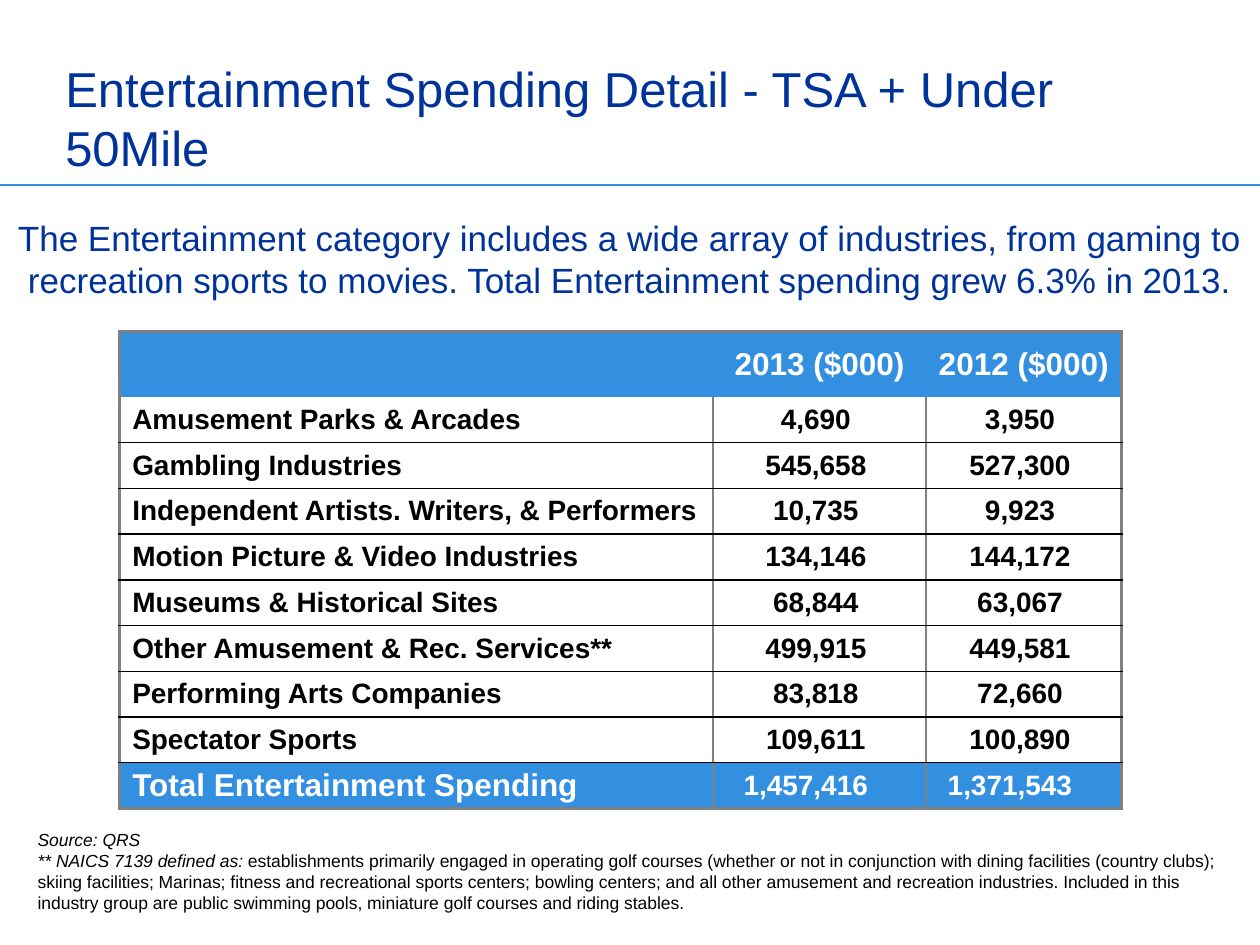
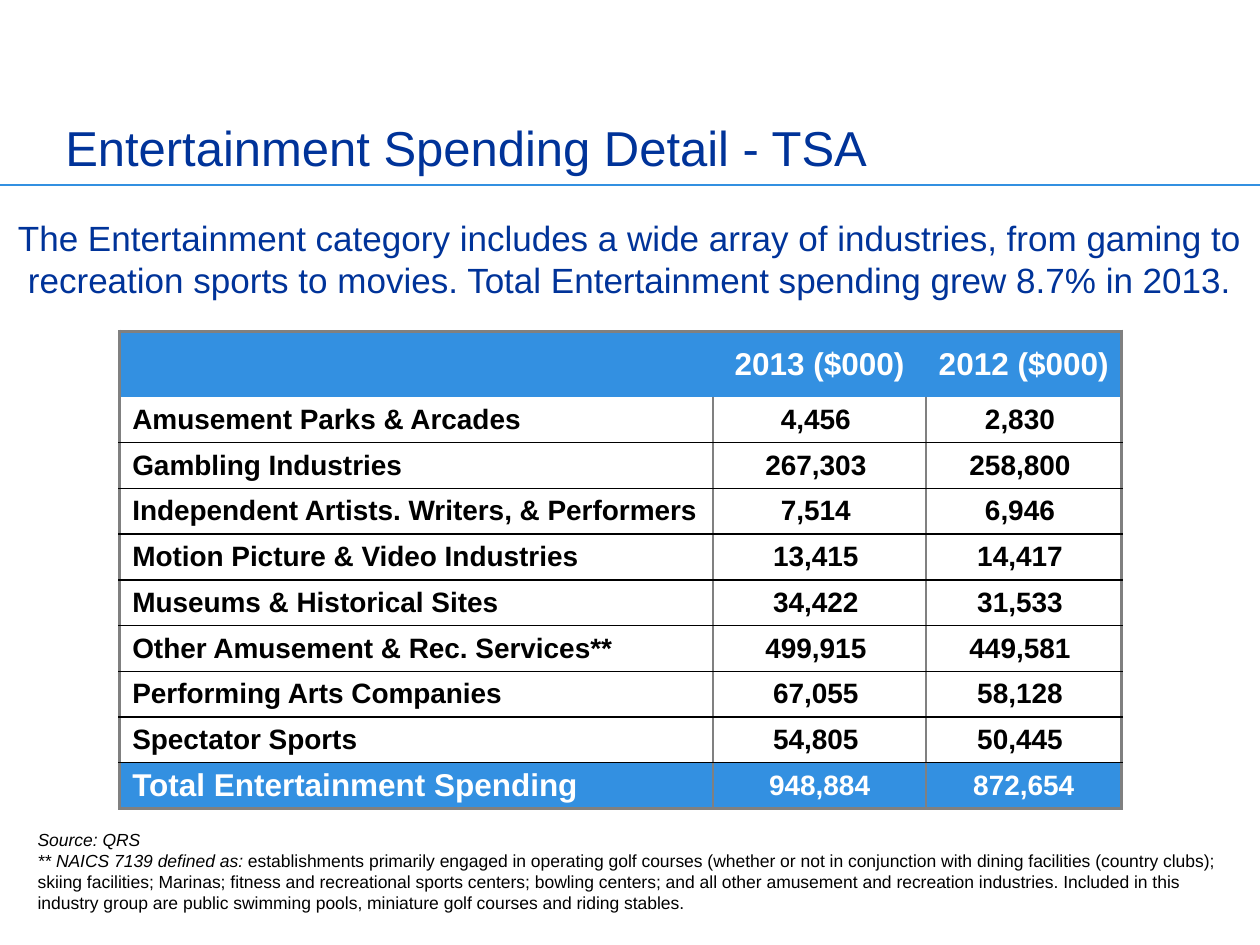
from dataclasses import dataclass
from typing import NamedTuple, Optional

from lxml import etree
from pptx import Presentation
from pptx.dml.color import RGBColor
from pptx.enum.shapes import MSO_CONNECTOR, MSO_SHAPE
from pptx.enum.text import MSO_ANCHOR, PP_ALIGN
from pptx.oxml.ns import qn
from pptx.util import Emu, Pt

LEFT, CENTER = PP_ALIGN.LEFT, PP_ALIGN.CENTER
TOP, MIDDLE, BOTTOM = MSO_ANCHOR.TOP, MSO_ANCHOR.MIDDLE, MSO_ANCHOR.BOTTOM
STRAIGHT, RECTANGLE = MSO_CONNECTOR.STRAIGHT, MSO_SHAPE.RECTANGLE
EMU_PER_PX = 9144  # 100 px to the inch


def px(length: int) -> Emu:
    return Emu(length * EMU_PER_PX)


# Theme
@dataclass(frozen=True)
class Theme:
    font: str = "Arial"
    navy: str = "003399"
    blue: str = "3390E1"
    gray: str = "808080"
    black: str = "000000"
    white: str = "FFFFFF"
    title_size: int = 28
    intro_size: int = 20
    heading_size: int = 18
    body_size: int = 16
    note_size: int = 10
    thin: float = 1
    thick: float = 2.25


THEME = Theme()


class Box(NamedTuple):
    left: int
    top: int
    width: int
    height: int

    def emu(self) -> list[Emu]:
        return [px(length) for length in self]


class Style(NamedTuple):
    size: int
    color: str
    align: PP_ALIGN = LEFT
    anchor: MSO_ANCHOR = MIDDLE
    bold: bool = False


class Margins(NamedTuple):
    left: int
    top: int
    right: int
    bottom: int


class Border(NamedTuple):
    color: str
    points: float


class SpendingSlide(NamedTuple):
    title: str
    growth: str
    values: list[tuple[str, str]]
    totals: tuple[str, str]
    total_right_margin: int


# Layout
SLIDE_WIDTH, SLIDE_HEIGHT = 1000, 750
RULE_Y = 147
TITLE_BOX = Box(42, 21, 823, 124)
INTRO_BOX = Box(0, 128, 1000, 154)
TABLE_BOX = Box(95, 263, 795, 379)
NOTE_BOX = Box(20, 653, 959, 77)
COLUMN_WIDTHS = (471, 169, 155)
HEADER_HEIGHT = 52

TITLE_STYLE = Style(THEME.title_size, THEME.navy, anchor=BOTTOM)
INTRO_STYLE = Style(THEME.intro_size, THEME.navy, CENTER)
NOTE_STYLE = Style(THEME.note_size, THEME.black, anchor=TOP)
HEADER_STYLE = Style(THEME.heading_size, THEME.white, CENTER, bold=True)
LABEL_STYLE = Style(THEME.body_size, THEME.black, bold=True)
VALUE_STYLE = LABEL_STYLE._replace(align=CENTER)
TOTAL_LABEL_STYLE = HEADER_STYLE._replace(align=LEFT)
TOTAL_VALUE_STYLE = VALUE_STYLE._replace(color=THEME.white)

LABEL_MARGINS = Margins(10, 1, 10, 1)
VALUE_MARGINS = Margins(0, 0, 6, 0)
OUTER = Border(THEME.gray, THEME.thick)
COLUMN_LINE = Border(THEME.gray, THEME.thin)
ROW_LINE = Border(THEME.black, THEME.thin)

# Content
INTRO = ("The Entertainment category includes a wide array of industries, from gaming to "
         "recreation sports to movies. Total Entertainment spending grew {} in 2013.")
HEADINGS = ("", "2013 ($000)", "2012 ($000)")
INDUSTRIES = (
    "Amusement Parks & Arcades",
    "Gambling Industries",
    "Independent Artists. Writers, & Performers",
    "Motion Picture & Video Industries",
    "Museums & Historical Sites",
    "Other Amusement & Rec. Services**",
    "Performing Arts Companies",
    "Spectator Sports",
)
TOTAL_LABEL = "Total Entertainment Spending"
SOURCE = "Source: QRS"
NOTE_LEAD = "** NAICS 7139 defined as: "
NOTE = ("establishments primarily engaged in operating golf courses (whether or not in "
        "conjunction with dining facilities (country clubs); skiing facilities; Marinas; "
        "fitness and recreational sports centers; bowling centers; and all other amusement "
        "and recreation industries. Included in this industry group are public swimming "
        "pools, miniature golf courses and riding stables.")

SLIDES = (
    SpendingSlide(
        "Entertainment Spending Detail - TSA + Under 50Mile", "6.3%",
        [("4,690", "3,950"), ("545,658", "527,300"), ("10,735", "9,923"),
         ("134,146", "144,172"), ("68,844", "63,067"), ("499,915", "449,581"),
         ("83,818", "72,660"), ("109,611", "100,890")],
        ("1,457,416", "1,371,543"), 22),
    SpendingSlide(
        "Entertainment Spending Detail - TSA", "8.7%",
        [("4,456", "2,830"), ("267,303", "258,800"), ("7,514", "6,946"),
         ("13,415", "14,417"), ("34,422", "31,533"), ("499,915", "449,581"),
         ("67,055", "58,128"), ("54,805", "50,445")],
        ("948,884", "872,654"), 0),
)


# Text
def style_paragraph(paragraph, style: Style) -> None:
    paragraph.alignment = style.align
    font = paragraph.font
    font.name, font.size, font.bold = THEME.font, Pt(style.size), style.bold
    font.color.rgb = RGBColor.from_string(style.color)


def add_text(slide, box: Box, text: str, style: Style) -> None:
    frame = slide.shapes.add_textbox(*box.emu()).text_frame
    frame.word_wrap = True
    frame.vertical_anchor = style.anchor
    frame.text = text
    style_paragraph(frame.paragraphs[0], style)


def add_rule(slide) -> None:
    line = slide.shapes.add_connector(STRAIGHT, 0, px(RULE_Y), px(SLIDE_WIDTH), px(RULE_Y))
    line.line.color.rgb = RGBColor.from_string(THEME.blue)
    line.line.width = Pt(THEME.thin)
    etree.SubElement(line._element.spPr, qn("a:effectLst"))


def add_note(slide) -> None:
    shape = slide.shapes.add_shape(RECTANGLE, *NOTE_BOX.emu())
    shape.shadow.inherit = False
    shape.fill.solid()
    shape.fill.fore_color.rgb = RGBColor.from_string(THEME.white)
    shape.line.fill.background()
    frame = shape.text_frame
    frame.word_wrap = True
    frame.vertical_anchor = NOTE_STYLE.anchor
    source, definition = frame.paragraphs[0], frame.add_paragraph()
    for paragraph, text in ((source, SOURCE), (definition, NOTE_LEAD)):
        style_paragraph(paragraph, NOTE_STYLE)
        run = paragraph.add_run()
        run.text = text
        run.font.italic = True
    definition.add_run().text = NOTE


# Table
def set_border(cell, side: str, border: Optional[Border]) -> None:
    line = etree.SubElement(cell._tc.get_or_add_tcPr(), qn(f"a:ln{side}"))
    if border is None:
        etree.SubElement(line, qn("a:noFill"))
        return
    line.set("w", str(Pt(border.points)))
    fill = etree.SubElement(line, qn("a:solidFill"))
    etree.SubElement(fill, qn("a:srgbClr"), val=border.color)


def cell_borders(row: int, column: int, last_row: int) -> dict[str, Optional[Border]]:
    last_column = len(COLUMN_WIDTHS) - 1
    inner = COLUMN_LINE if row else None
    return {
        "L": OUTER if column == 0 else inner,
        "R": OUTER if column == last_column else inner,
        "T": OUTER if row == 0 else ROW_LINE if row > 1 else None,
        "B": OUTER if row == last_row else ROW_LINE if row else None,
    }


def fill_cell(cell, text: str, style: Style, margins: Margins, fill: str) -> None:
    cell.fill.solid()
    cell.fill.fore_color.rgb = RGBColor.from_string(fill)
    cell.vertical_anchor = style.anchor
    cell.margin_left, cell.margin_top, cell.margin_right, cell.margin_bottom = map(px, margins)
    cell.text = text
    style_paragraph(cell.text_frame.paragraphs[0], style)


def add_spending_table(slide, content: SpendingSlide) -> None:
    rows = [HEADINGS]
    rows += [(name, *pair) for name, pair in zip(INDUSTRIES, content.values)]
    rows.append((TOTAL_LABEL, *content.totals))
    last_row = len(rows) - 1
    table = slide.shapes.add_table(len(rows), len(HEADINGS), *TABLE_BOX.emu()).table
    table.first_row = table.horz_banding = False
    for column, width in zip(table.columns, COLUMN_WIDTHS):
        column.width = px(width)
    body_row_height = Emu(px(TABLE_BOX.height - HEADER_HEIGHT) // last_row)

    total_margins = VALUE_MARGINS._replace(right=content.total_right_margin)
    for row, texts in enumerate(rows):
        table.rows[row].height = body_row_height if row else px(HEADER_HEIGHT)
        if row == 0:
            label, value = HEADER_STYLE, HEADER_STYLE
            value_margins, fill = LABEL_MARGINS, THEME.blue
        elif row == last_row:
            label, value = TOTAL_LABEL_STYLE, TOTAL_VALUE_STYLE
            value_margins, fill = total_margins, THEME.blue
        else:
            label, value = LABEL_STYLE, VALUE_STYLE
            value_margins, fill = VALUE_MARGINS, THEME.white
        for column, text in enumerate(texts):
            cell = table.cell(row, column)
            for side, border in cell_borders(row, column, last_row).items():
                set_border(cell, side, border)
            fill_cell(cell, text, value if column else label,
                      value_margins if column else LABEL_MARGINS, fill)


def add_spending_slide(presentation, content: SpendingSlide) -> None:
    slide = presentation.slides.add_slide(presentation.slide_layouts[6])
    add_rule(slide)
    add_text(slide, TITLE_BOX, content.title, TITLE_STYLE)
    add_text(slide, INTRO_BOX, INTRO.format(content.growth), INTRO_STYLE)
    add_spending_table(slide, content)
    add_note(slide)


def main() -> None:
    presentation = Presentation()
    presentation.slide_width, presentation.slide_height = px(SLIDE_WIDTH), px(SLIDE_HEIGHT)
    for content in SLIDES:
        add_spending_slide(presentation, content)
    presentation.save("out.pptx")


if __name__ == "__main__":
    main()
